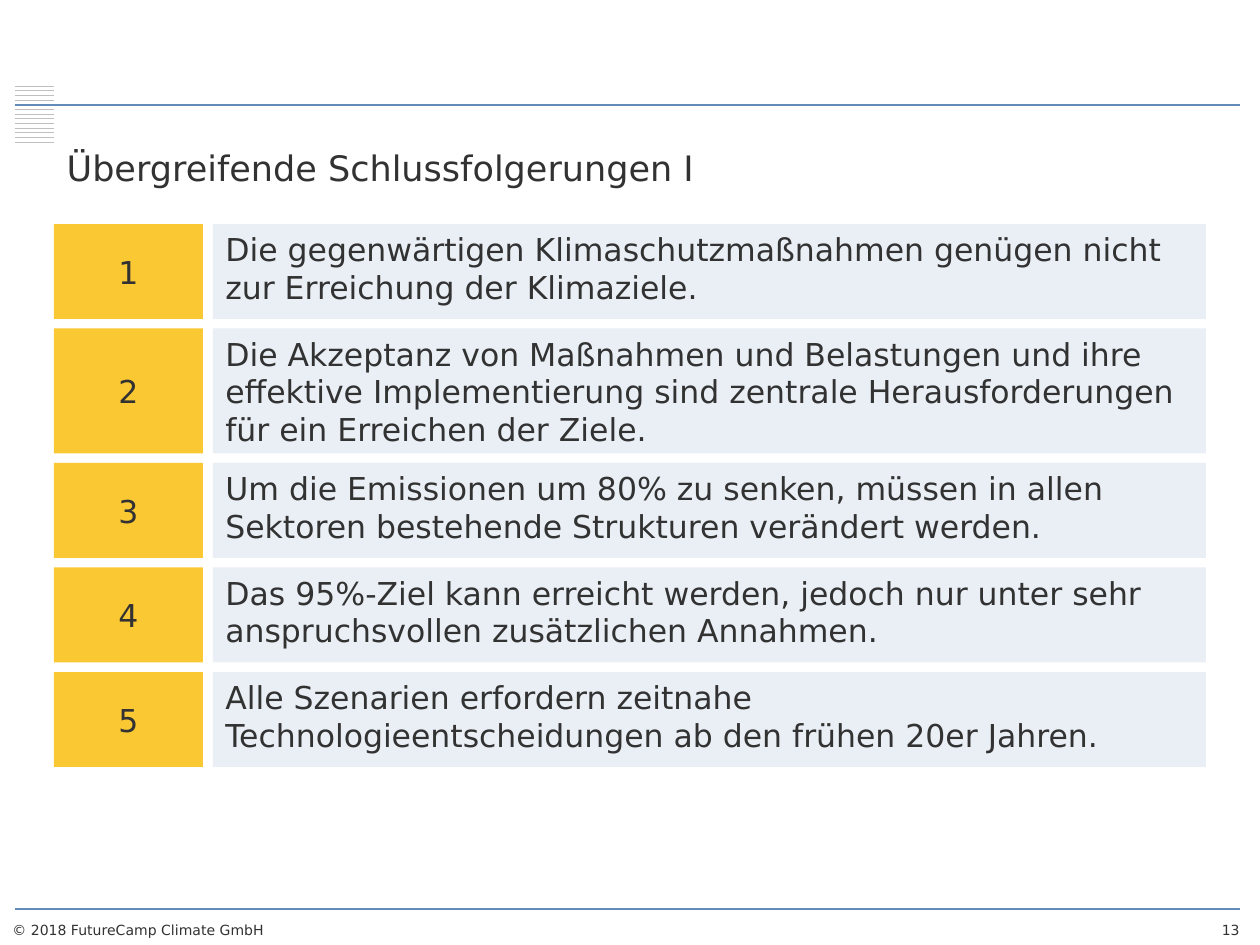
import pptx
import pptx.dml.color
import pptx.enum.shapes
import pptx.enum.text
import pptx.oxml
import pptx.util
from dataclasses import dataclass

ALIGN = pptx.enum.text.PP_ALIGN
ANCHOR = pptx.enum.text.MSO_ANCHOR


@dataclass(frozen=True)
class Theme:
    font: str = "DejaVu Sans"
    text: str = "323232"
    rule: str = "638BB8"
    hatch: str = "BFBFBF"
    number: str = "FAC832"
    statement: str = "E9EFF5"
    title_size: int = 20
    body_size: int = 18
    footer_size: int = 8


THEME = Theme()
PX_PER_INCH = 126
CONCLUSIONS = [  # row height, statement
    (95, "Die gegenwärtigen Klimaschutzmaßnahmen genügen nicht zur Erreichung der Klimaziele."),
    (125, "Die Akzeptanz von Maßnahmen und Belastungen und ihre effektive Implementierung "
          "sind zentrale Herausforderungen für ein Erreichen der Ziele."),
    (95, "Um die Emissionen um 80% zu senken, müssen in allen Sektoren bestehende "
         "Strukturen verändert werden."),
    (95, "Das 95%-Ziel kann erreicht werden, jedoch nur unter sehr anspruchsvollen "
         "zusätzlichen Annahmen."),
    (95, "Alle Szenarien erfordern zeitnahe Technologieentscheidungen ab den frühen 20er Jahren."),
]


def px(n):
    return round(n * 914400 / PX_PER_INCH)


def rgb(color):
    return pptx.dml.color.RGBColor.from_string(color)


def write(sp, text, size, align=ALIGN.LEFT, **frame):
    """Fill a shape with one formatted paragraph."""
    tf = sp.text_frame
    for name, value in {"word_wrap": True, **frame}.items():
        setattr(tf, name, value)
    p = tf.paragraphs[0]
    p.alignment = align
    r = p.add_run()
    r.text = text
    for name, value in {"name": THEME.font, "size": pptx.util.Pt(size)}.items():
        setattr(r.font, name, value)
    r.font.color.rgb = rgb(THEME.text)


def add_rule(shapes, x, y, w, color, weight):
    line = shapes.add_connector(
        pptx.enum.shapes.MSO_CONNECTOR.STRAIGHT, px(x), px(y), px(x + w), px(y))
    line.line.color.rgb = rgb(color)
    line.line.width = pptx.util.Pt(weight)
    sp_pr = line._element.spPr
    sp_pr.append(pptx.oxml.parse_xml(
        '<a:effectLst xmlns:a="http://schemas.openxmlformats.org/drawingml/2006/main"/>'))


def add_panel(s, x, y, w, h, fill):
    sp = s.shapes.add_shape(
        pptx.enum.shapes.MSO_SHAPE.RECTANGLE, px(x), px(y), px(w), px(h))
    sp.shadow.inherit = False
    sp.fill.solid()
    sp.fill.fore_color.rgb = rgb(fill)
    sp.line.fill.background()
    return sp


def add_hatch(s, x, y, w, h, steps=12, rule_step=4):
    """Stack of thin lines; the header rule takes one of the steps."""
    group = s.shapes.add_group_shape()
    for i in range(steps + 1):
        if i != rule_step:
            add_rule(group.shapes, x, y + h * i / steps, w, THEME.hatch, 0.5)


def add_title(s, x, y, w, h, text):
    sp = s.shapes.title
    for name, value in {"left": x, "top": y, "width": w, "height": h}.items():
        setattr(sp, name, px(value))
    write(sp, text, THEME.title_size, vertical_anchor=ANCHOR.MIDDLE,
          margin_top=0, margin_bottom=0, auto_size=pptx.enum.text.MSO_AUTO_SIZE.NONE)


def add_conclusions(s, x, y, w, h, rows, number_w=149, column_gap=10):
    """Numbered rows, spread evenly over the height of the box."""
    gap = (h - sum(row_h for row_h, _ in rows)) / (len(rows) - 1)
    offset = number_w + column_gap
    for number, (row_h, text) in enumerate(rows, 1):
        sp = add_panel(s, x + offset, y, w - offset, row_h, THEME.statement)
        write(sp, text, THEME.body_size, vertical_anchor=ANCHOR.TOP)
        sp = add_panel(s, x, y, number_w, row_h, THEME.number)
        write(sp, str(number), THEME.body_size, ALIGN.CENTER,
              vertical_anchor=ANCHOR.MIDDLE, word_wrap=False)
        y += row_h + gap


def add_footer(s, x, y, w, h, owner, page, owner_w=441, page_w=118):
    for left, width, text, align in (
            (x, owner_w, owner, ALIGN.LEFT),
            (x + w - page_w, page_w, page, ALIGN.RIGHT)):
        sp = s.shapes.add_textbox(px(left), px(y), px(width), px(h))
        write(sp, text, THEME.footer_size, align)


def main():
    prs = pptx.Presentation()
    prs.slide_width, prs.slide_height = px(1260), px(945)
    s = prs.slides.add_slide(prs.slide_layouts[5])

    # Frame: footer and header rules, hatch mark
    for y in (909, 105):
        add_rule(s.shapes, 15, y, 1225, THEME.rule, 1)
    add_hatch(s, 15, 86, 39, 56)
    add_footer(s, 0, 915, 1252, 30, "© 2018 FutureCamp Climate GmbH", "13")

    # Content
    add_title(s, 54, 131, 1152, 72, "Übergreifende Schlussfolgerungen I")
    add_conclusions(s, 54, 224, 1152, 543, CONCLUSIONS)
    prs.save("out.pptx")


if __name__ == "__main__":
    main()
